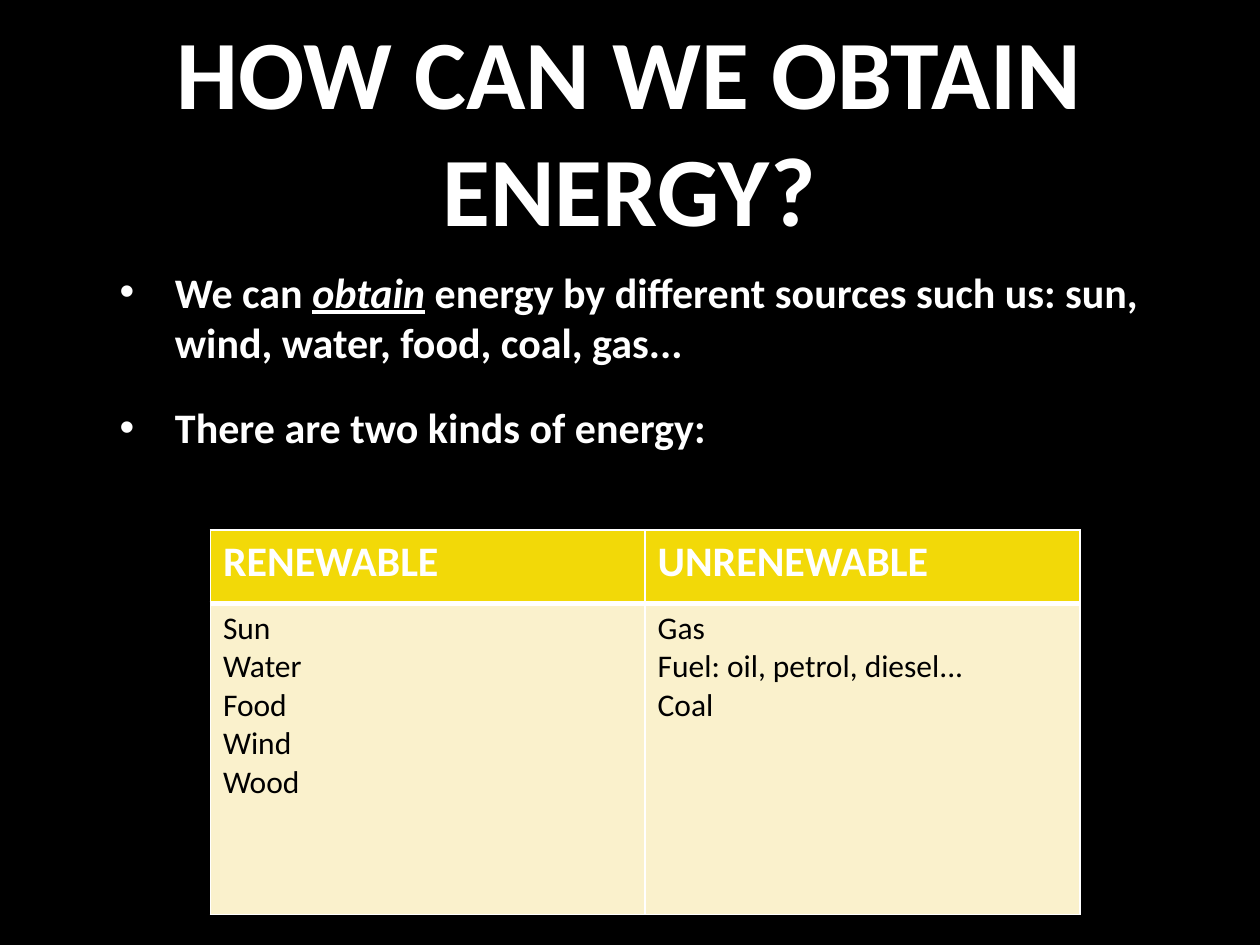
"""Build a slide on the sources of energy."""
from dataclasses import dataclass

from lxml import etree
from pptx import Presentation
from pptx.dml.color import RGBColor
from pptx.enum.text import MSO_ANCHOR, MSO_AUTO_SIZE, PP_ALIGN
from pptx.oxml.ns import qn
from pptx.util import Inches, Pt

CENTER, LEFT = PP_ALIGN.CENTER, PP_ALIGN.LEFT
MIDDLE = MSO_ANCHOR.MIDDLE
NO_FIT = MSO_AUTO_SIZE.NONE
WIDE, HIGH = 10, 7.5


@dataclass(frozen=True)
class Theme:
    """Hold the font, colours and type sizes."""
    font: str = "Calibri"
    back: str = "000000"
    light: str = "FFFFFF"
    dark: str = "000000"
    head: str = "F2D908"
    body: str = "FAF1CC"
    title: int = 56
    text: int = 24
    small: int = 18
    thin: int = 1
    thick: int = 3


THEME = Theme()
POINTS = [
    [("We can ", False), ("obtain", True),
     (" energy by different sources such us: sun, wind, water, food, coal, gas...", False)],
    [("There are two kinds of energy:", False)],
]
KINDS = {
    "RENEWABLE": ["Sun", "Water", "Food", "Wind", "Wood"],
    "UNRENEWABLE": ["Gas", "Fuel: oil, petrol, diesel...", "Coal"],
}


def area(left, top, width, height):
    """Turn shares of the slide's size into lengths."""
    return (Inches(left * WIDE), Inches(top * HIGH),
            Inches(width * WIDE), Inches(height * HIGH))


def write(para, text, size=THEME.text, color=THEME.light, bold=True,
          accent=False, align=LEFT):
    """Add a formatted run of text to a paragraph."""
    para.alignment = align
    run = para.add_run()
    run.text = text
    font = run.font
    font.name, font.size = THEME.font, Pt(size)
    font.bold, font.italic, font.underline = bold, accent, accent
    font.color.rgb = RGBColor.from_string(color)


def paras(frame, count):
    """Return the given number of paragraphs of a text frame."""
    return [frame.paragraphs[0]] + [frame.add_paragraph() for _ in range(count - 1)]


def bullet(para):
    """Give a paragraph a hanging bullet."""
    props = para._p.get_or_add_pPr()
    props.set("marL", str(Inches(0.44)))
    props.set("indent", str(Inches(-0.44)))
    etree.SubElement(props, qn("a:buFont"), typeface="Arial")
    etree.SubElement(props, qn("a:buChar"), char="•")


def add_title(slide, text):
    """Place and fill the title."""
    title = slide.shapes.title
    title.left, title.top, title.width, title.height = area(0.085, 0.016, 0.829, 0.241)
    frame = title.text_frame
    frame.word_wrap, frame.auto_size = True, NO_FIT
    frame.vertical_anchor = MIDDLE
    write(frame.paragraphs[0], text, size=THEME.title, align=CENTER)


def add_list(slide, points):
    """Add the bulleted points."""
    frame = slide.shapes.add_textbox(*area(0.085, 0.275, 0.829, 0.576)).text_frame
    frame.word_wrap = True
    for num, (para, runs) in enumerate(zip(paras(frame, len(points)), points)):
        if num:
            para.space_before = Pt(20)
        bullet(para)
        for text, accent in runs:
            write(para, text, accent=accent)


def border(cell, side, width):
    """Draw one edge of a table cell."""
    line = etree.SubElement(cell._tc.get_or_add_tcPr(), qn(f"a:ln{side}"), w=str(Pt(width)))
    fill = etree.SubElement(line, qn("a:solidFill"))
    etree.SubElement(fill, qn("a:srgbClr"), val=THEME.light)


def fill_cell(cell, lines, fill, heavy, **style):
    """Write, edge and fill one table cell."""
    for para, text in zip(paras(cell.text_frame, len(lines)), lines):
        write(para, text, **style)
    for side in "LRTB":
        border(cell, side, THEME.thick if side == heavy else THEME.thin)
    cell.fill.solid()
    cell.fill.fore_color.rgb = RGBColor.from_string(fill)


def add_kinds(slide, kinds):
    """Add the table with one column for each kind of energy."""
    place = area(0.167, 0.561, 0.69, 0.407)
    table = slide.shapes.add_table(2, len(kinds), *place).table
    table.rows[0].height = Inches(0.58)
    table.rows[1].height = place[3] - Inches(0.58)
    for col, (kind, names) in enumerate(kinds.items()):
        fill_cell(table.cell(0, col), [kind], THEME.head, "B")
        fill_cell(table.cell(1, col), names, THEME.body, "T",
                  size=THEME.small, color=THEME.dark, bold=False)


def main():
    """Build and save the slide."""
    deck = Presentation()
    deck.slide_width, deck.slide_height = Inches(WIDE), Inches(HIGH)
    slide = deck.slides.add_slide(deck.slide_layouts[5])
    slide.background.fill.solid()
    slide.background.fill.fore_color.rgb = RGBColor.from_string(THEME.back)
    add_title(slide, "HOW CAN WE OBTAIN ENERGY?")
    add_list(slide, POINTS)
    add_kinds(slide, KINDS)
    deck.save("out.pptx")


if __name__ == "__main__":
    main()
